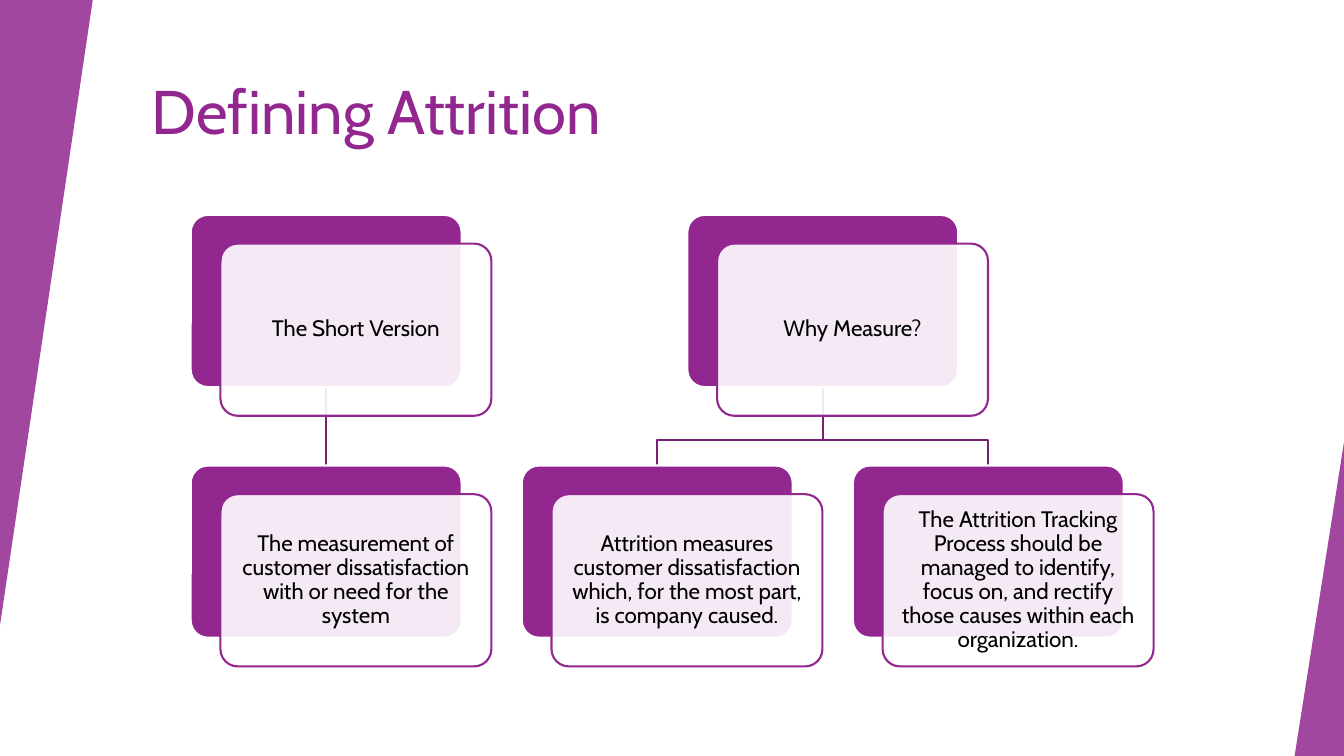
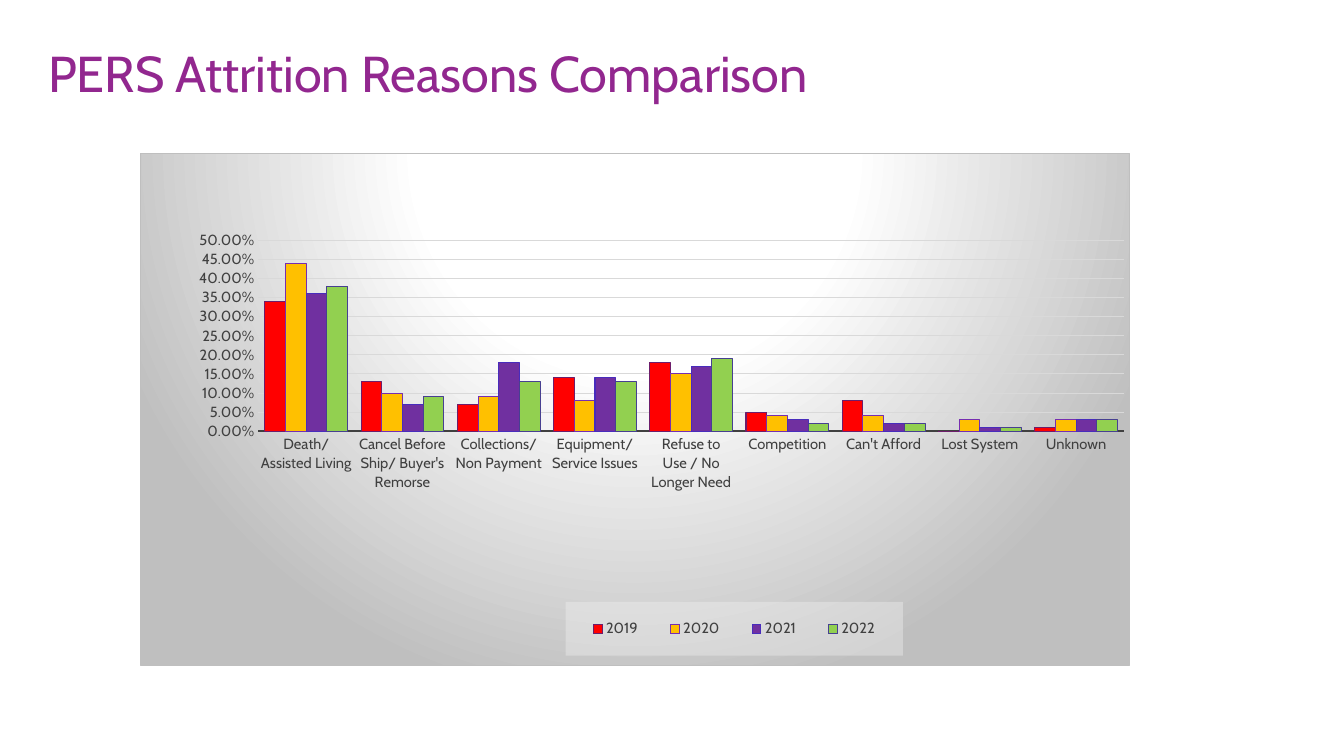
"""Build two slides on customer attrition: a definition tree and a reasons chart."""
from dataclasses import dataclass

from lxml import etree
from pptx import Presentation
from pptx.chart.data import CategoryChartData
from pptx.dml.color import RGBColor as RGB
from pptx.enum.chart import XL_CHART_TYPE as ChartType
from pptx.enum.chart import XL_LEGEND_POSITION as LegendPos
from pptx.enum.chart import XL_TICK_MARK as Tick
from pptx.enum.shapes import MSO_CONNECTOR as Connector
from pptx.enum.shapes import MSO_SHAPE as Shape
from pptx.enum.text import MSO_ANCHOR as Anchor
from pptx.enum.text import PP_ALIGN as Align
from pptx.oxml import parse_xml
from pptx.oxml.ns import qn
from pptx.util import Pt


@dataclass(frozen=True)
class Theme:
    font: str = "Cabin"
    purple: str = "92278F"
    branch: str = "751F73"
    white: str = "FFFFFF"
    black: str = "000000"
    label: str = "404040"
    grid: str = "D9D9D9"
    edge: str = "BFBFBF"
    legend: str = "F2F2F2"
    title_size: float = 44
    chart_title_size: float = 36
    card_size: float = 16
    label_size: float = 10.5
    rule: float = 1.5
    hairline: float = 0.75


@dataclass(frozen=True)
class Card:
    column: float
    row: int
    text: str

    @property
    def left(self) -> float:
        return 136.25 + 236.5 * self.column

    @property
    def top(self) -> float:
        return 153.5 + 179 * self.row

    @property
    def center(self) -> float:
        return self.left + CARD_W / 2


@dataclass(frozen=True)
class Series:
    name: str
    color: str
    outline: str
    values: tuple[float, ...]


T = Theme()
CARD_W, CARD_H = 193.5, 123
FRONT_DX, FRONT_DY = 21.25, 20.5
BRANCH_DROP = 38
NS = ('xmlns:c="http://schemas.openxmlformats.org/drawingml/2006/chart" '
      'xmlns:a="http://schemas.openxmlformats.org/drawingml/2006/main"')

SHORT = Card(0, 0, "The Short Version")
WHY = Card(1.5, 0, "Why Measure?")
TREE = {
    SHORT: [Card(0, 1, "The measurement of customer dissatisfaction with or need for the system")],
    WHY: [
        Card(1, 1, "Attrition measures customer dissatisfaction which, for the most part, "
                   "is company caused."),
        Card(2, 1, "The Attrition Tracking Process should be managed to identify, focus on, "
                   "and rectify those causes within each organization."),
    ],
}
REASONS = (
    "Death/Assisted Living", "Cancel Before Ship/ Buyer's Remorse", "Collections/ Non Payment",
    "Equipment/ Service Issues", "Refuse to Use / No Longer Need", "Competition",
    "Can't Afford", "Lost System", "Unknown",
)
YEARS = (
    Series("2019", "FF0000", "6D1D6B", (0.34, 0.13, 0.07, 0.14, 0.18, 0.05, 0.08, 0, 0.01)),
    Series("2020", "FFC000", "762EB1", (0.44, 0.1, 0.09, 0.08, 0.15, 0.04, 0.04, 0.03, 0.03)),
    Series("2021", "7030A0", "482CBC", (0.36, 0.07, 0.18, 0.14, 0.17, 0.03, 0.02, 0.01, 0.03)),
    Series("2022", "92D050", "474091", (0.38, 0.09, 0.13, 0.13, 0.19, 0.02, 0.02, 0.01, 0.03)),
)


def set_font(font, size: float, color: str) -> None:
    font.name, font.size = T.font, Pt(size)
    font.color.rgb = RGB.from_string(color)


def set_line(line, color: str, width: float) -> None:
    line.color.rgb = RGB.from_string(color)
    line.width = Pt(width)


def set_fill(fill, color: str) -> None:
    fill.solid()
    fill.fore_color.rgb = RGB.from_string(color)


def add_title(s, text: str, left: float, top: float, width: float, height: float,
              size: float) -> None:
    tf = s.shapes.add_textbox(Pt(left), Pt(top), Pt(width), Pt(height)).text_frame
    tf.word_wrap = True
    tf.text = text
    set_font(tf.paragraphs[0].runs[0].font, size, T.purple)


def add_solid(s, kind, left: float, top: float, width: float, height: float,
              color: str, adjust: float, opacity: int = 100):
    sp = s.shapes.add_shape(kind, Pt(left), Pt(top), Pt(width), Pt(height))
    sp.shadow.inherit = False
    sp.adjustments[0] = adjust
    set_fill(sp.fill, color)
    if opacity < 100:
        clr = sp.fill._xPr.find(qn("a:solidFill"))[0]
        etree.SubElement(clr, qn("a:alpha"), val=str(opacity * 1000))
    sp.line.fill.background()
    return sp


def add_wedge(s, left: float, top: float, width: float, height: float, turn: int) -> None:
    add_solid(s, Shape.ISOSCELES_TRIANGLE, left, top, width, height, T.purple, 1, 85).rotation = turn


def add_branch(s, parent: Card, child: Card) -> None:
    start, end = parent.top + CARD_H, child.top
    if parent.center == child.center:
        sp = s.shapes.add_connector(Connector.STRAIGHT, Pt(parent.center), Pt(start),
                                    Pt(child.center), Pt(end))
        etree.SubElement(sp._element.spPr, qn("a:effectLst"))
    else:
        bend = start + BRANCH_DROP
        path = s.shapes.build_freeform(Pt(parent.center), Pt(start))
        path.add_line_segments([(Pt(parent.center), Pt(bend)), (Pt(child.center), Pt(bend)),
                                (Pt(child.center), Pt(end))], close=False)
        sp = path.convert_to_shape()
        sp.shadow.inherit = False
        sp.fill.background()
    set_line(sp.line, T.branch, T.rule)


def add_card(s, card: Card) -> None:
    back = add_solid(s, Shape.ROUNDED_RECTANGLE, card.left, card.top, CARD_W, CARD_H, T.purple, 0.1)
    set_line(back.line, T.white, T.rule)
    front = add_solid(s, Shape.ROUNDED_RECTANGLE, card.left + FRONT_DX, card.top + FRONT_DY,
                      CARD_W, CARD_H, T.white, 0.1, 90)
    set_line(front.line, T.purple, T.rule)
    tf = front.text_frame
    tf.word_wrap, tf.vertical_anchor = True, Anchor.MIDDLE
    tf.margin_left = tf.margin_right = tf.margin_top = tf.margin_bottom = Pt(5)
    tf.text = card.text
    p = tf.paragraphs[0]
    p.alignment, p.line_spacing, p.space_after = Align.CENTER, 0.9, Pt(5.6)
    set_font(p.runs[0].font, T.card_size, T.black)


def layout_xml(x: float, y: float, w: float, h: float, inner: bool = False):
    target = '<c:layoutTarget val="inner"/>' if inner else ""
    return parse_xml(
        f'<c:layout {NS}><c:manualLayout>{target}<c:xMode val="edge"/><c:yMode val="edge"/>'
        f'<c:x val="{x}"/><c:y val="{y}"/><c:w val="{w}"/><c:h val="{h}"/>'
        '</c:manualLayout></c:layout>')


def style_axes(chart) -> None:
    cat, val = chart.category_axis, chart.value_axis
    for axis in (cat, val):
        axis.major_tick_mark = axis.minor_tick_mark = Tick.NONE
        set_font(axis.tick_labels.font, T.label_size, T.label)
    set_line(cat.format.line, T.label, T.rule)
    val.minimum_scale, val.maximum_scale, val.major_unit = 0, 0.5, 0.05
    val.tick_labels.number_format = "0.00%"
    val.tick_labels.number_format_is_linked = False
    val.format.line.fill.background()
    set_line(val.major_gridlines.format.line, T.grid, T.hairline)


def style_frame(chart) -> None:
    area = chart._chartSpace.find(qn("c:chart"))
    plot_area = area.find(qn("c:plotArea"))
    for old in plot_area.findall(qn("c:layout")):
        plot_area.remove(old)
    plot_area.insert(0, layout_xml(0.119, 0.169, 0.876, 0.373, True))
    stops = "".join(f'<a:gs pos="{pos * 1000}"><a:srgbClr val="{color}"/></a:gs>'
                    for pos, color in ((0, T.white), (39, T.white), (100, T.edge)))
    area.addnext(parse_xml(
        f'<c:spPr {NS}><a:gradFill><a:gsLst>{stops}</a:gsLst><a:path path="circle">'
        '<a:fillToRect l="50000" t="-80000" r="50000" b="180000"/></a:path></a:gradFill>'
        f'<a:ln w="{Pt(T.hairline)}"><a:solidFill><a:srgbClr val="{T.edge}"/></a:solidFill>'
        '</a:ln></c:spPr>'))


def style_legend(chart) -> None:
    chart.has_legend = True
    legend = chart.legend
    legend.position, legend.include_in_layout = LegendPos.BOTTOM, False
    set_font(legend.font, T.label_size, T.label)
    el = legend._element
    for old in el.findall(qn("c:layout")):
        el.remove(old)
    el.find(qn("c:legendPos")).addnext(layout_xml(0.43, 0.875, 0.341, 0.105))
    el.find(qn("c:txPr")).addprevious(parse_xml(
        f'<c:spPr {NS}><a:solidFill><a:srgbClr val="{T.legend}"><a:alpha val="39000"/>'
        '</a:srgbClr></a:solidFill><a:ln><a:noFill/></a:ln></c:spPr>'))


def add_reasons_chart(s) -> None:
    data = CategoryChartData(number_format="0.00%")
    data.categories = REASONS
    for year in YEARS:
        data.add_series(year.name, year.values)
    chart = s.shapes.add_chart(ChartType.COLUMN_CLUSTERED, Pt(100), Pt(109.5), Pt(707),
                               Pt(366.5), data).chart
    chart.has_title = False
    set_font(chart.font, 10, T.black)
    plot = chart.plots[0]
    plot.gap_width, plot.overlap, plot.vary_by_categories = 65, 0, False
    for bars, year in zip(plot.series, YEARS):
        bars.invert_if_negative = False
        set_fill(bars.format.fill, year.color)
        set_line(bars.format.line, year.outline, T.hairline)
    style_axes(chart)
    style_legend(chart)
    style_frame(chart)


def build_definition(s) -> None:
    add_title(s, "Defining Attrition", 101.5, 48.25, 803, 86.5, T.title_size)
    add_wedge(s, 0, 0, 66.25, 446.5, 180)
    add_wedge(s, 924.75, 316, 35.25, 224, 0)
    for parent, children in TREE.items():
        for child in children:
            add_branch(s, parent, child)
    for parent, children in TREE.items():
        for card in (parent, *children):
            add_card(s, card)


def build_comparison(s) -> None:
    add_title(s, "PERS Attrition Reasons Comparison", 27.25, 26.5, 677, 69, T.chart_title_size)
    add_reasons_chart(s)


def main() -> None:
    prs = Presentation()
    prs.slide_width, prs.slide_height = Pt(960), Pt(540)
    for build in (build_definition, build_comparison):
        build(prs.slides.add_slide(prs.slide_layouts[6]))
    prs.save("out.pptx")


if __name__ == "__main__":
    main()
